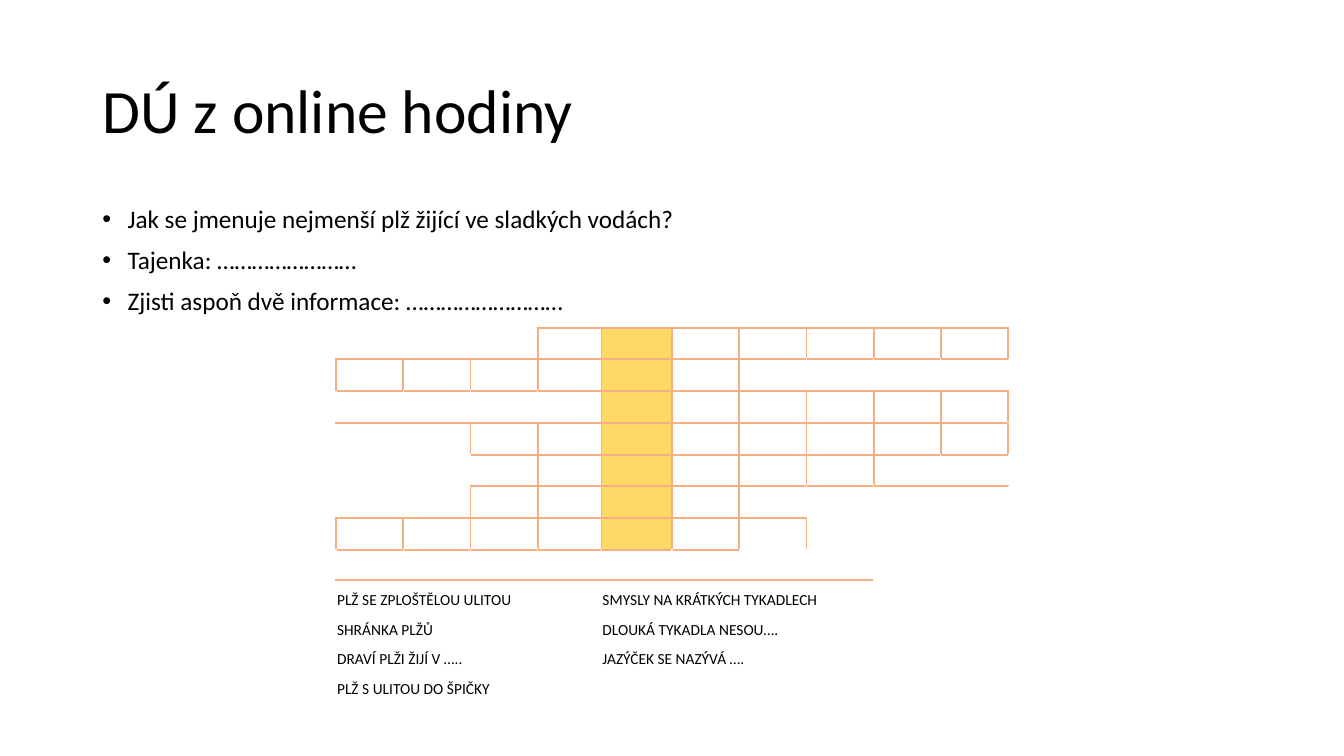
"""Build the homework slide with a crossword about snails."""
from lxml.etree import SubElement
from pptx import Presentation
from pptx.dml.color import RGBColor
from pptx.enum.text import MSO_ANCHOR, MSO_AUTO_SIZE, PP_ALIGN
from pptx.oxml.ns import qn
from pptx.util import Inches, Pt

COLORS = {"text": "000000", "border": "F4B084", "solution": "FFD966"}
QUESTIONS = [
    "Jak se jmenuje nejmenší plž žijící ve sladkých vodách?",
    "Tajenka: ……………………",
    "Zjisti aspoň dvě informace: ………………………",
]
WORD_SPANS = [(4, 10), (1, 5), (5, 9), (3, 10), (4, 7), (3, 5), (1, 6)]
SOLUTION_COLUMN = 5
COLUMN_WIDTHS = [8] * 4 + [7.6, 8.4] + [8] * 6
ROW_HEIGHTS = [3.78] * 7 + [3.6] + [3.52] * 5
CLUES = [
    (8, 1, 3, "PLŽ SE ZPLOŠTĚLOU ULITOU"),
    (9, 1, 2, "SHRÁNKA PLŽŮ"),
    (10, 1, 2, "DRAVÍ PLŽI ŽIJÍ V ….."),
    (11, 1, 3, "PLŽ S ULITOU DO ŠPIČKY"),
    (8, 5, 4, "SMYSLY NA KRÁTKÝCH TYKADLECH"),
    (9, 5, 3, "DLOUKÁ TYKADLA NESOU…."),
    (10, 5, 3, "JAZÝČEK SE NAZÝVÁ …."),
]


class HomeworkSlide:
    """Hold the style, the current slide and its grid of 160 columns by 90 rows."""

    font = "Calibri"

    def __init__(self, deck):
        """Size the deck and add a slide with a title."""
        deck.slide_width, deck.slide_height = Inches(13.33), Inches(7.5)
        self.unit = deck.slide_height / 90
        self.slide = deck.slides.add_slide(deck.slide_layouts[5])

    def length(self, units):
        """Turn grid units into a slide length."""
        return round(units * self.unit)

    def style(self, paragraph, size):
        """Format every run of a paragraph."""
        for run in paragraph.runs:
            run.font.size = Pt(size)
            run.font.name = self.font
            run.font.color.rgb = RGBColor.from_string(COLORS["text"])

    def title(self, text, left, top, width, height):
        """Place and fill the title placeholder."""
        heading = self.slide.shapes.title
        heading.left, heading.top = self.length(left), self.length(top)
        heading.width, heading.height = self.length(width), self.length(height)
        frame = heading.text_frame
        frame.text = text
        frame.auto_size = MSO_AUTO_SIZE.NONE
        frame.vertical_anchor = MSO_ANCHOR.MIDDLE
        frame.paragraphs[0].alignment = PP_ALIGN.LEFT
        frame.paragraphs[0].line_spacing = 0.9
        self.style(frame.paragraphs[0], 44)

    def bullets(self, lines, *box):
        """Add a bulleted list."""
        frame = self.slide.shapes.add_textbox(*map(self.length, box)).text_frame
        frame.word_wrap = True
        frame.text = "\n".join(lines)
        for paragraph in frame.paragraphs:
            paragraph.line_spacing = 0.9
            paragraph.space_before = Pt(10)
            properties = paragraph._p.get_or_add_pPr()
            properties.set("marL", str(Inches(0.25)))
            properties.set("indent", str(-Inches(0.25)))
            SubElement(properties, qn("a:buFont"), typeface="Arial")
            SubElement(properties, qn("a:buChar"), char="•")
            self.style(paragraph, 18)

    def border(self, cell, side):
        """Draw one side of a cell."""
        line = SubElement(cell._tc.get_or_add_tcPr(), qn(f"a:ln{side}"), w=str(Pt(1.5)))
        fill = SubElement(line, qn("a:solidFill"))
        SubElement(fill, qn("a:srgbClr"), val=COLORS["border"])

    def crossword(self, left, top):
        """Add the crossword with its clues below."""
        size = len(ROW_HEIGHTS), len(COLUMN_WIDTHS)
        box = left, top, sum(COLUMN_WIDTHS), sum(ROW_HEIGHTS)
        table = self.slide.shapes.add_table(*size, *map(self.length, box)).table
        table.first_row = table.horz_banding = False
        for column, width in zip(table.columns, COLUMN_WIDTHS):
            column.width = self.length(width)
        for row, height in zip(table.rows, ROW_HEIGHTS):
            row.height = self.length(height)
        letters = {
            (row, column)
            for row, (first, last) in enumerate(WORD_SPANS)
            for column in range(first, last + 1)
        }
        for row in range(size[0]):
            for column in range(size[1]):
                self.square(table.cell(row, column), row, column, letters)
        for row, column, span, clue in CLUES:
            cell = table.cell(row, column)
            cell.merge(table.cell(row, column + span - 1))
            cell.text_frame.text = clue
            self.style(cell.text_frame.paragraphs[0], 11)

    def square(self, cell, row, column, letters):
        """Format one cell, with borders wherever it touches a letter."""
        cell.margin_left = cell.margin_right = cell.margin_top = Inches(0.01)
        cell.margin_bottom = 0
        cell.vertical_anchor = MSO_ANCHOR.BOTTOM
        SubElement(cell.text_frame.paragraphs[0]._p, qn("a:endParaRPr"), sz="1100")
        neighbours = {
            "L": (row, column - 1),
            "R": (row, column + 1),
            "T": (row - 1, column),
            "B": (row + 1, column),
        }
        for side, neighbour in neighbours.items():
            if letters & {(row, column), neighbour}:
                self.border(cell, side)
        if column == SOLUTION_COLUMN and (row, column) in letters:
            cell.fill.solid()
            cell.fill.fore_color.rgb = RGBColor.from_string(COLORS["solution"])
        else:
            cell.fill.background()


def main():
    """Build and save the deck."""
    deck = Presentation()
    homework = HomeworkSlide(deck)
    homework.title("DÚ z online hodiny", 11, 4.8, 138, 17.4)
    homework.bullets(QUESTIONS, 11, 24, 138, 57.1)
    homework.crossword(32, 39)
    deck.save("out.pptx")


if __name__ == "__main__":
    main()
